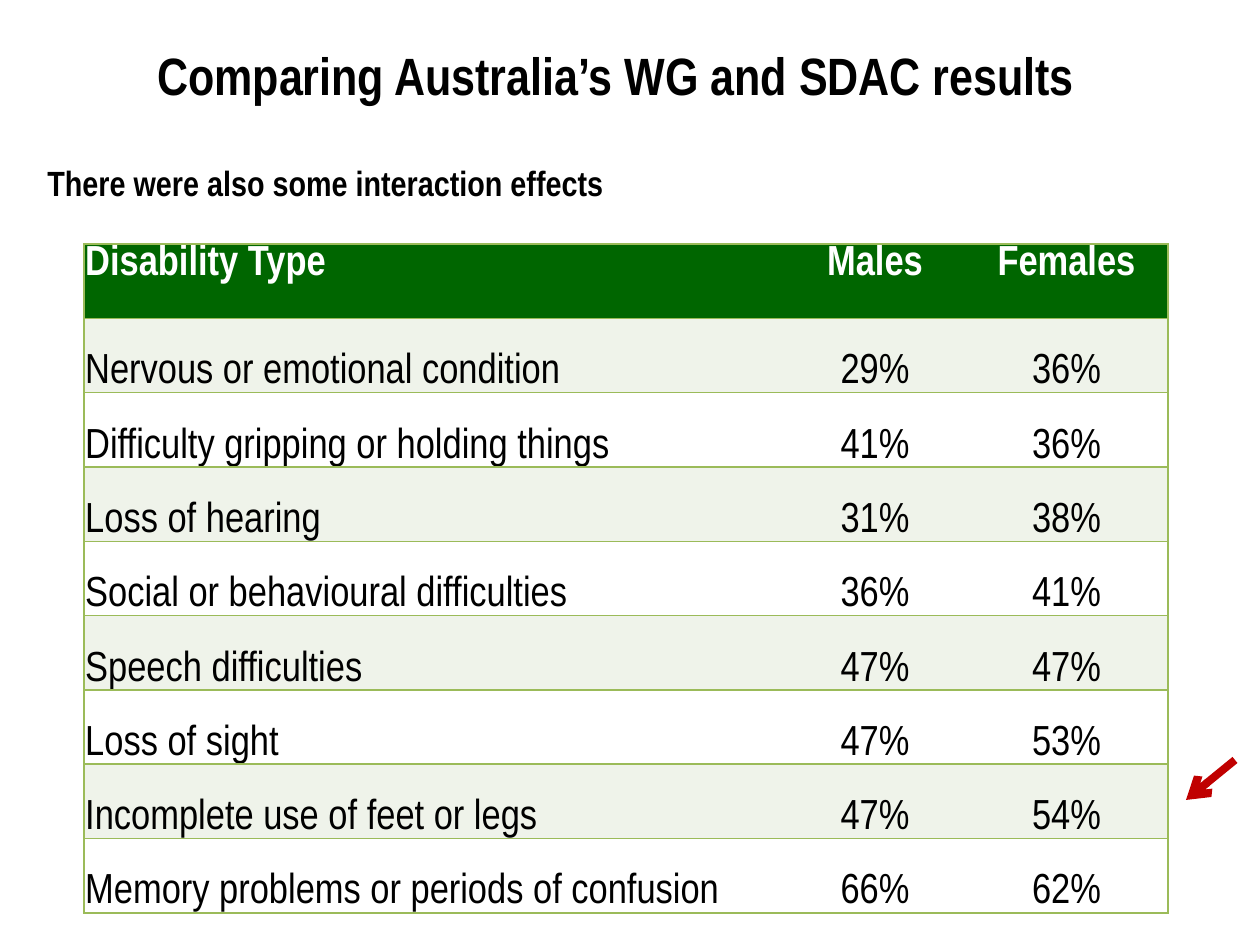
from lxml.etree import SubElement
from pptx import Presentation
from pptx.dml.color import RGBColor
from pptx.enum.shapes import MSO_CONNECTOR
from pptx.enum.text import MSO_ANCHOR, MSO_AUTO_SIZE, PP_ALIGN
from pptx.oxml import parse_xml
from pptx.oxml.ns import nsdecls, qn
from pptx.util import Emu, Inches, Pt

SCALE = 914400 / 126
GREEN, PALE, WHITE, BLACK = "006600", "EFF3EA", "FFFFFF", "000000"
BORDER, RED = "9BBB59", "C00000"


def px(length):
    return Emu(round(length * SCALE))


def color(value):
    return RGBColor.from_string(value)


class SlideBuilder:
    font = "Arial Narrow"

    def __init__(self, page):
        self.page = page

    def span(self, para, text, size, shade, bold):
        span = para.add_run()
        span.text = text
        values = {"name": self.font, "size": Pt(size), "bold": bold}
        for name, value in values.items():
            setattr(span.font, name, value)
        span.font.color.rgb = color(shade)

    def text(self, text, place, size, wrap):
        box = self.page.shapes.add_textbox(*map(px, place))
        frame = box.text_frame
        frame.word_wrap = wrap
        frame.auto_size = MSO_AUTO_SIZE.SHAPE_TO_FIT_TEXT
        self.span(frame.paragraphs[0], text, size, BLACK, True)

    def arrow(self, start, end, shade, width):
        points = map(px, (*start, *end))
        arrow = self.page.shapes.add_connector(MSO_CONNECTOR.STRAIGHT, *points)
        arrow.line.color.rgb = color(shade)
        arrow.line.width = Pt(width)
        props = arrow._element.spPr
        SubElement(props.find(qn("a:ln")), qn("a:tailEnd"), type="arrow")
        SubElement(props, qn("a:effectLst"))

    def borders(self, cell, sides):
        props = cell._tc.get_or_add_tcPr()
        for index, side in enumerate("LRTB"):
            paint = (f'<a:solidFill><a:srgbClr val="{BORDER}"/></a:solidFill>'
                     if side in sides else "<a:noFill/>")
            props.insert(index, parse_xml(
                f'<a:ln{side} {nsdecls("a")} w="12700">{paint}</a:ln{side}>'))

    def cell(self, cell, text, header, centred, fill):
        values = {
            "margin_left": Inches(0.01), "margin_right": Inches(0.01),
            "margin_top": Inches(0.01), "margin_bottom": 0,
            "vertical_anchor": MSO_ANCHOR.TOP if header else MSO_ANCHOR.BOTTOM,
        }
        for name, value in values.items():
            setattr(cell, name, value)
        cell.fill.solid()
        cell.fill.fore_color.rgb = color(fill)
        para = cell.text_frame.paragraphs[0]
        para.alignment = PP_ALIGN.CENTER if centred else PP_ALIGN.LEFT
        self.span(para, text, 24, WHITE if header else BLACK, header)

    def table(self, rows, left, top, widths, height):
        place = map(px, (left, top, sum(widths), height))
        table = self.page.shapes.add_table(len(rows), len(widths), *place).table
        for column, width in zip(table.columns, widths):
            column.width = px(width)
        last = len(widths) - 1
        for r, row in enumerate(rows):
            table.rows[r].height = px(height / len(rows))
            fill = GREEN if r == 0 else PALE if r % 2 else WHITE
            for c, text in enumerate(row):
                cell = table.cell(r, c)
                self.cell(cell, text, r == 0, c > 0, fill)
                self.borders(cell, "TB" + "L" * (c == 0) + "R" * (c == last))


ROWS = [
    ("Disability Type", "Males", "Females"),
    ("Nervous or emotional condition", "29%", "36%"),
    ("Difficulty gripping or holding things", "41%", "36%"),
    ("Loss of hearing", "31%", "38%"),
    ("Social or behavioural difficulties", "36%", "41%"),
    ("Speech difficulties", "47%", "47%"),
    ("Loss of sight", "47%", "53%"),
    ("Incomplete use of feet or legs", "47%", "54%"),
    ("Memory problems or periods of confusion", "66%", "62%"),
]


def main():
    deck = Presentation()
    deck.slide_width, deck.slide_height = px(1260), px(945)
    slide = SlideBuilder(deck.slides.add_slide(deck.slide_layouts[6]))

    # Subheading
    slide.text("There were also some interaction effects",
               (35, 155, 593, 55), 20, False)
    # Arrow pointing at the leg mobility row
    slide.arrow((1235, 760), (1186, 800), RED, 4.5)
    # Results by sex
    slide.table(ROWS, 84, 244, (701, 180, 203), 669)
    # Title
    slide.text("Comparing Australia’s WG and SDAC results",
               (145, 37, 1022, 77), 30, True)

    deck.save("out.pptx")


if __name__ == "__main__":
    main()
